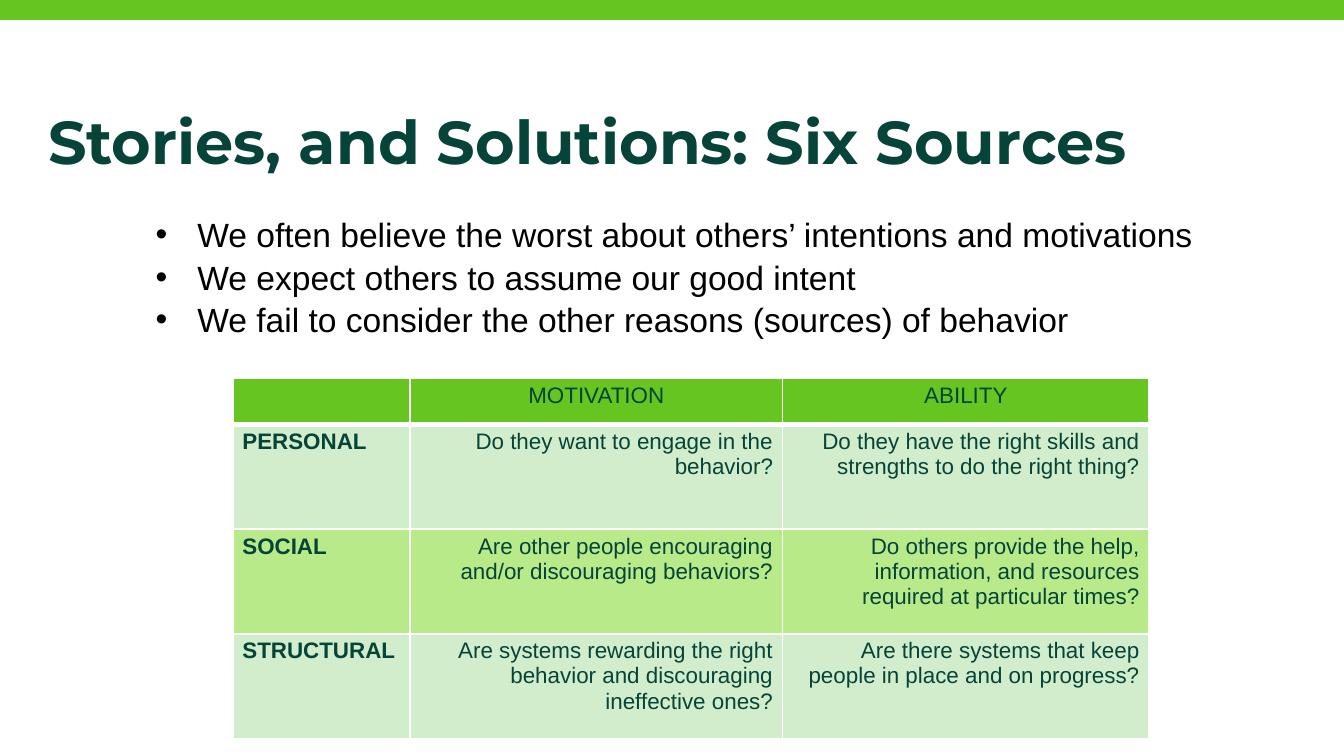
from lxml import etree
from pptx import Presentation
from pptx import util as u
from pptx.dml.color import RGBColor
from pptx.enum import shapes, text
from pptx.oxml.ns import qn

GREEN, DARK, WHITE, BLACK = "67C521", "064339", "FFFFFF", "000000"
BANDS = ("D2EDCB", "B8EA8A")
ALIGN = text.PP_ALIGN

BULLETS = (
    "We often believe the worst about others’ intentions and motivations",
    "We expect others to assume our good intent",
    "We fail to consider the other reasons (sources) of behavior",
)
SOURCES = (
    ("", "MOTIVATION", "ABILITY"),
    ("PERSONAL", "Do they want to engage in the behavior?",
     "Do they have the right skills and strengths to do the right thing?"),
    ("SOCIAL", "Are other people encouraging and/or discouraging behaviors?",
     "Do others provide the help, information, and resources "
     "required at particular times?"),
    ("STRUCTURAL", "Are systems rewarding the right behavior and "
     "discouraging ineffective ones?",
     "Are there systems that keep people in place and on progress?"),
)


def color(value):
    return RGBColor.from_string(value)


def cm(values):
    return [u.Cm(value) for value in values]


def set_all(target, **values):
    for name, value in values.items():
        setattr(target, name, value)


def write(para, words, size, ink, name="Arial", bold=False):
    span = para.add_run()
    span.text = words
    set_all(span.font, size=u.Pt(size), name=name, bold=bold)
    span.font.color.rgb = color(ink)


def add_frame(slide, box, **values):
    frame = slide.shapes.add_textbox(*cm(box)).text_frame
    set_all(frame, word_wrap=True, **values)
    return frame


def add_top_bar(slide, box):
    bar = slide.shapes.add_shape(shapes.MSO_SHAPE.RECTANGLE, *cm(box))
    bar.shadow.inherit = False
    bar.fill.solid()
    bar.fill.fore_color.rgb = color(GREEN)
    bar.line.fill.background()


def add_title(slide, box, words):
    frame = add_frame(slide, box, vertical_anchor=text.MSO_ANCHOR.MIDDLE,
                      margin_top=0, margin_bottom=u.Cm(0.91))
    write(frame.paragraphs[0], words, 32.4, DARK, "Montserrat", True)


def add_bullets(slide, box, lines):
    frame = add_frame(slide, box, margin_top=u.Cm(0.15))
    for index, line in enumerate(lines):
        para = frame.add_paragraph() if index else frame.paragraphs[0]
        para.line_spacing = 1.05
        write(para, line, 18, BLACK)
        # Hanging indent with a round bullet
        props = para._p.get_or_add_pPr()
        props.set("marL", str(u.Cm(0.79)))
        props.set("indent", str(-u.Cm(0.79)))
        etree.SubElement(props, qn("a:buFont"), typeface="Arial")
        etree.SubElement(props, qn("a:buChar"), char="•")


def add_borders(cell, bottom):
    props = cell._tc.get_or_add_tcPr()
    for side, width in zip("LRTB", (1, 1, 1, bottom)):
        line = etree.SubElement(props, qn(f"a:ln{side}"), w=str(u.Pt(width)))
        fill = etree.SubElement(line, qn("a:solidFill"))
        etree.SubElement(fill, qn("a:srgbClr"), val=WHITE)


def add_source_table(slide, box, widths, heights, rows):
    table = slide.shapes.add_table(len(rows), len(widths), *cm(box)).table
    for column, width in zip(table.columns, widths):
        column.width = u.Cm(width)
    for r, (height, row) in enumerate(zip(heights, rows)):
        table.rows[r].height = u.Cm(height)
        for c, words in enumerate(row):
            cell = table.cell(r, c)
            set_all(cell, margin_left=u.Cm(0.18), margin_right=u.Cm(0.18),
                    margin_top=u.Cm(0.09), margin_bottom=u.Cm(0.09))
            add_borders(cell, 1 if r else 3)
            cell.fill.solid()
            cell.fill.fore_color.rgb = color(BANDS[(r - 1) % 2] if r else GREEN)
            para = cell.text_frame.paragraphs[0]
            if r == 0:
                para.alignment = ALIGN.CENTER
            else:
                para.alignment = ALIGN.RIGHT if c else ALIGN.LEFT
            if words:
                write(para, words, 12, DARK, bold=r > 0 and c == 0)
            else:
                # Keeps the empty corner cell from stretching its row
                etree.SubElement(para._p, qn("a:endParaRPr"), sz="1200")


def main():
    deck = Presentation()
    set_all(deck, slide_width=u.Cm(25.4), slide_height=u.Cm(14.29))
    slide = deck.slides.add_slide(deck.slide_layouts[6])
    add_top_bar(slide, (0, 0, 25.4, 0.38))
    add_title(slide, (0.66, 2.01, 21.06, 2.21),
              "Stories, and Solutions: Six Sources")
    add_source_table(slide, (4.4, 7.15, 17.32, 6.81), (3.35, 7.04, 6.93),
                     (0.87, 1.98, 1.98, 1.98), SOURCES)
    add_bullets(slide, (2.69, 3.86, 20.62, 3.33), BULLETS)
    deck.save("out.pptx")


if __name__ == "__main__":
    main()
